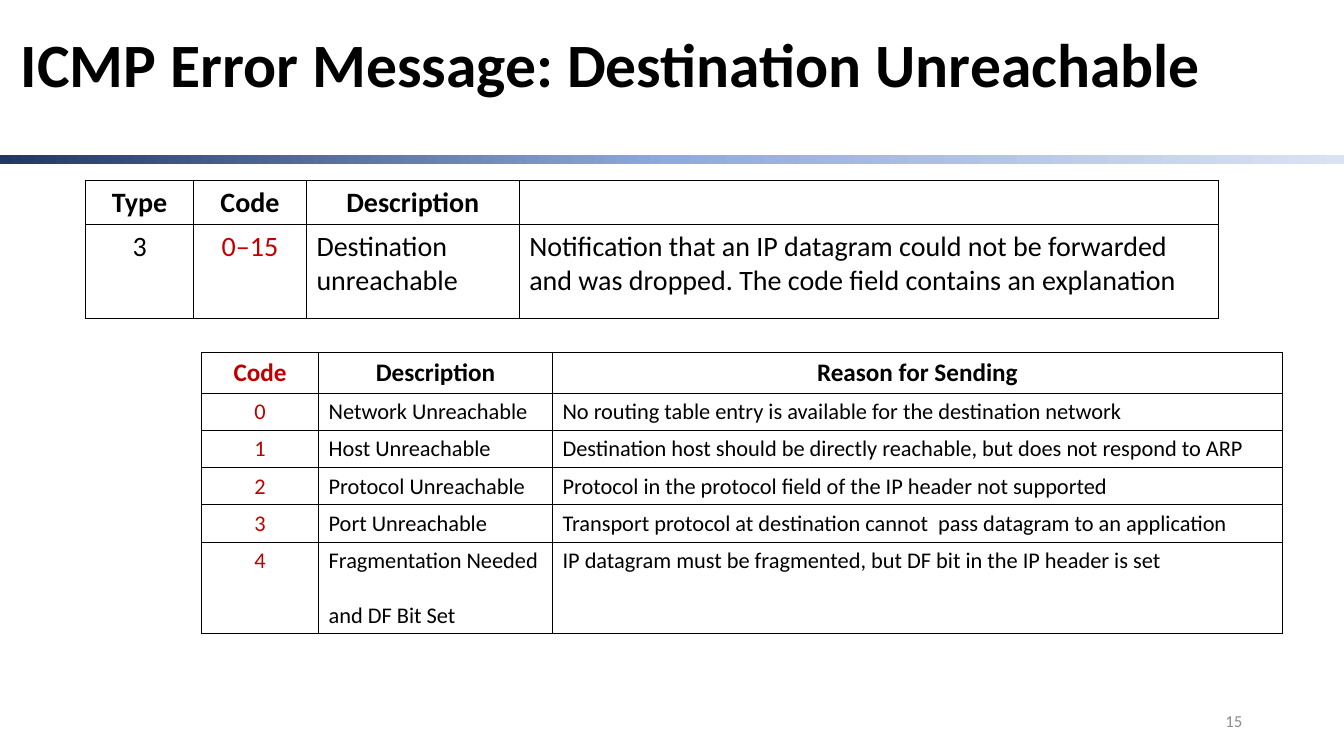
"""Build the slide on the ICMP destination unreachable message."""
from copy import deepcopy

from lxml.etree import SubElement
from pptx import Presentation
from pptx.dml.color import RGBColor
from pptx.enum.shapes import MSO_SHAPE
from pptx.enum.text import MSO_ANCHOR, PP_ALIGN
from pptx.oxml.ns import qn
from pptx.util import Inches, Pt

TITLE = "ICMP Error Message: Destination Unreachable"
PAGE = "15"
MESSAGE = [
    ("Type", "Code", "Description", ""),
    ("3", "0–15", "Destination unreachable",
     "Notification that an IP datagram could not be forwarded and was dropped. "
     "The code field contains an explanation"),
]
CODES = [
    ("Code", "Description", "Reason for Sending"),
    ("0", "Network Unreachable",
     "No routing table entry is available for the destination network"),
    ("1", "Host Unreachable",
     "Destination host should be directly reachable, but does not respond to ARP"),
    ("2", "Protocol Unreachable",
     "Protocol in the protocol field of the IP header not supported"),
    ("3", "Port Unreachable",
     "Transport protocol at destination cannot  pass datagram to an application"),
    ("4", "Fragmentation Needed\nand DF Bit Set",
     "IP datagram must be fragmented, but DF bit in the IP header is set"),
]
COLORS = {"text": "000000", "code": "C00000", "page": "8C8C8C", "paper": "FFFFFF"}
BAND = {0: "203864", 0.5: "8FAADC", 1: "DAE3F3"}
FONT = "Calibri"
WIDTH, HEIGHT = 13.33, 7.5


def style(p, size, color, bold=False, align=PP_ALIGN.LEFT):
    p.alignment = align
    for r in p.runs:
        r.font.name, r.font.size, r.font.bold = FONT, Pt(size), bold
        r.font.color.rgb = RGBColor.from_string(COLORS[color])


def add_text(s, text, box, **look):
    tf = s.shapes.add_textbox(*map(Inches, box)).text_frame
    tf.word_wrap = True
    tf.vertical_anchor = MSO_ANCHOR.MIDDLE
    tf.text = text
    style(tf.paragraphs[0], **look)
    return tf


def add_band(s):
    sp = s.shapes.add_shape(MSO_SHAPE.RECTANGLE, 0, Inches(1.54),
                            Inches(WIDTH), Inches(0.09))
    sp.shadow.inherit = False
    sp.line.fill.background()
    sp.fill.gradient()
    sp.fill.gradient_angle = 0
    stops = sp._element.spPr.find(qn("a:gradFill")).find(qn("a:gsLst"))
    stops.append(deepcopy(stops[-1]))
    for stop, (position, color) in zip(sp.fill.gradient_stops, BAND.items()):
        stop.position = position
        stop.color.rgb = RGBColor.from_string(color)


def add_borders(cell, width):
    tc_pr = cell._tc.get_or_add_tcPr()
    for side in ("a:lnL", "a:lnR", "a:lnT", "a:lnB"):
        ln = SubElement(tc_pr, qn(side), w=str(Pt(width)))
        fill = SubElement(ln, qn("a:solidFill"))
        SubElement(fill, qn("a:srgbClr"), val=COLORS["text"])


def add_grid(s, rows, left, top, cols, heights, code_col, sizes, border):
    head_size, body_size = sizes
    table = s.shapes.add_table(len(rows), len(cols), Inches(left), Inches(top),
                               Inches(sum(cols)), Inches(sum(heights))).table
    table.first_row = table.horz_banding = False
    for column, width in zip(table.columns, cols):
        column.width = Inches(width)
    for i, (row, height) in enumerate(zip(rows, heights)):
        table.rows[i].height = Inches(height)
        for j, text in enumerate(row):
            cell = table.cell(i, j)
            add_borders(cell, border)
            cell.fill.solid()
            cell.fill.fore_color.rgb = RGBColor.from_string(COLORS["paper"])
            cell.text = text
            head = i == 0
            size = head_size if head else body_size
            red = j == code_col and (not head or code_col == 0)
            centred = head or j <= code_col
            for k, p in enumerate(cell.text_frame.paragraphs):
                style(p, size, "code" if red else "text", head,
                      PP_ALIGN.CENTER if centred else PP_ALIGN.LEFT)
                if k:
                    p.space_before = Pt(1.22 * size)


def main():
    prs = Presentation()
    prs.slide_width, prs.slide_height = Inches(WIDTH), Inches(HEIGHT)
    s = prs.slides.add_slide(prs.slide_layouts[6])
    add_band(s)
    title = add_text(s, TITLE, (0.11, 0.17, 13.11, 1), size=44, color="text", bold=True)
    title.paragraphs[0].line_spacing = 0.9
    add_grid(s, MESSAGE, 0.85, 1.79, (1.07, 1.12, 2.11, 6.94), (0.44, 0.93),
             code_col=1, sizes=(20, 20), border=1)
    add_grid(s, CODES, 2, 3.5, (1.16, 2.32, 7.24), (0.4, *[0.37] * 4, 0.91),
             code_col=0, sizes=(18, 16), border=0.75)
    add_text(s, PAGE, (9.42, 6.95, 3, 0.4), size=12, color="page",
             align=PP_ALIGN.RIGHT)
    prs.save("out.pptx")


if __name__ == "__main__":
    main()
